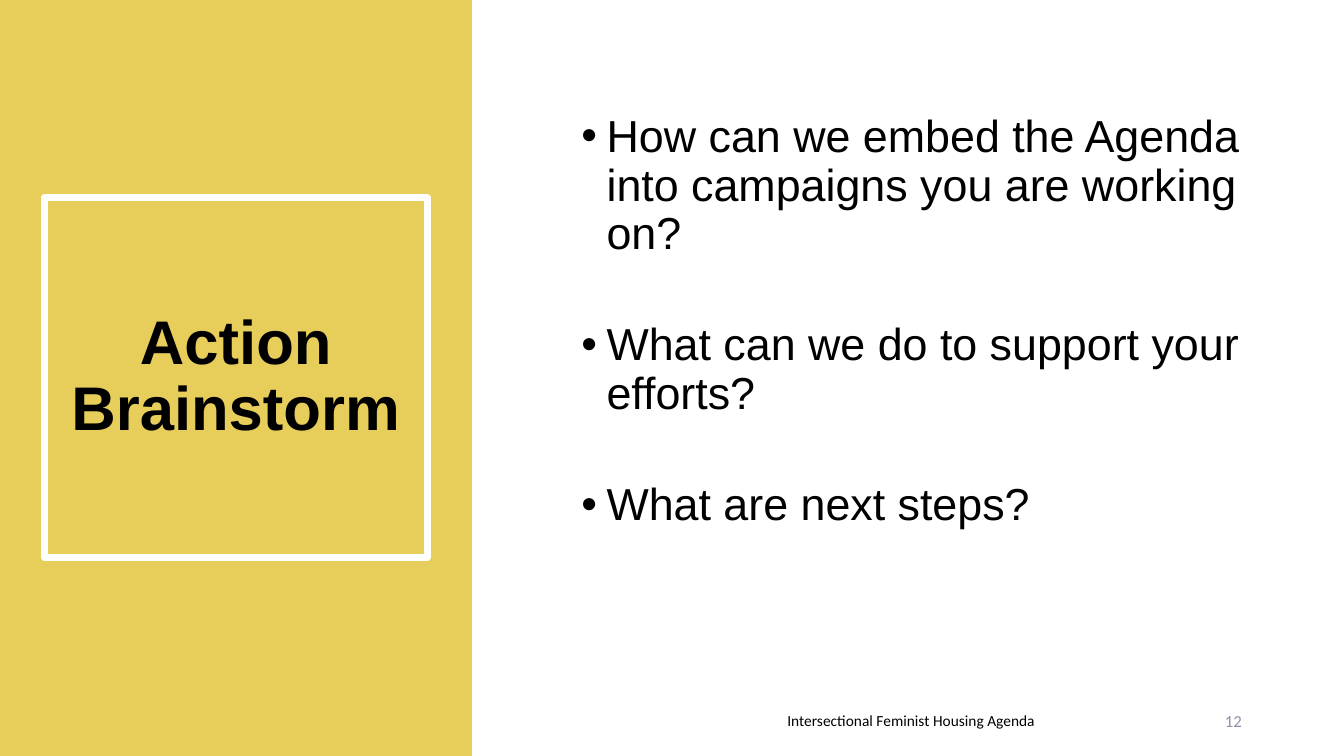
from lxml.etree import SubElement
from pptx import Presentation
from pptx.dml.color import RGBColor
from pptx.enum.shapes import MSO_SHAPE as Shape
from pptx.enum.text import MSO_ANCHOR as Anchor, MSO_AUTO_SIZE as AutoSize, PP_ALIGN as Align
from pptx.oxml.ns import qn
from pptx.util import Pt

GOLD, WHITE, BLACK, GREY = "E7CE5A", "FFFFFF", "000000", "8E90A5"
QUESTIONS = [
    "How can we embed the Agenda into campaigns you are working on?",
    "What can we do to support your efforts?",
    "What are next steps?",
]


def color(value):
    return RGBColor.from_string(value)


def place(shape, left, top, width, height):
    shape.left, shape.top = Pt(left), Pt(top)
    shape.width, shape.height = Pt(width), Pt(height)


def style(para, size, font="Arial", ink=BLACK, bold=False, align=Align.LEFT):
    para.alignment = align
    para.font.name, para.font.size, para.font.bold = font, Pt(size), bold
    para.font.color.rgb = color(ink)


def add_bullet(para, indent):
    props = para._p.get_or_add_pPr()
    props.set("marL", str(Pt(indent)))
    props.set("indent", str(-Pt(indent)))
    SubElement(props, qn("a:buFont")).set("typeface", "Arial")
    SubElement(props, qn("a:buChar")).set("char", "•")


def add_text_box(page, left, top, width, height, anchor):
    box = page.shapes.add_textbox(Pt(left), Pt(top), Pt(width), Pt(height))
    box.text_frame.word_wrap = True
    box.text_frame.vertical_anchor = anchor
    return box.text_frame


def add_panel(page, width, height):
    panel = page.shapes.add_shape(Shape.RECTANGLE, 0, 0, Pt(width), Pt(height))
    panel.shadow.inherit = False
    panel.fill.solid()
    panel.fill.fore_color.rgb = panel.line.color.rgb = color(GOLD)
    panel.line.width = Pt(1)
    # Put the panel behind the title
    page.shapes._spTree.insert(2, panel._element)


def set_title(page, text):
    title = page.shapes.title
    place(title, 31.7, 141.1, 273.6, 257)
    title.line.color.rgb = color(WHITE)
    title.line.width = Pt(5)
    frame = title.text_frame
    frame.text = text
    frame.word_wrap, frame.auto_size = True, AutoSize.NONE
    frame.vertical_anchor = Anchor.MIDDLE
    para = frame.paragraphs[0]
    para.line_spacing = 0.9
    style(para, 44, bold=True, align=Align.CENTER)


def add_questions(page, questions):
    frame = add_text_box(page, 408.2, 77.8, 486, 383.8, Anchor.TOP)
    for number, question in enumerate(questions):
        para = frame.add_paragraph() if number else frame.paragraphs[0]
        para.text = question
        para.line_spacing = 0.9
        para.space_before = Pt(45 if number else 0)
        add_bullet(para, 18)
        style(para, 32)


def add_footer(page, left, width, text, size, ink, align):
    frame = add_text_box(page, left, 500.4, width, 28.8, Anchor.MIDDLE)
    frame.text = text
    style(frame.paragraphs[0], size, "Calibri", ink, align=align)


def main():
    deck = Presentation()
    deck.slide_width, deck.slide_height = Pt(960), Pt(540)
    page = deck.slides.add_slide(deck.slide_layouts[5])

    # Left side
    add_panel(page, 337, 540)
    set_title(page, "Action Brainstorm")

    # Right side
    add_questions(page, QUESTIONS)

    # Footer
    add_footer(page, 488.9, 324, "Intersectional Feminist Housing Agenda", 11, BLACK, Align.CENTER)
    add_footer(page, 678.2, 216, "12", 12, GREY, Align.RIGHT)

    deck.save("out.pptx")


if __name__ == "__main__":
    main()
